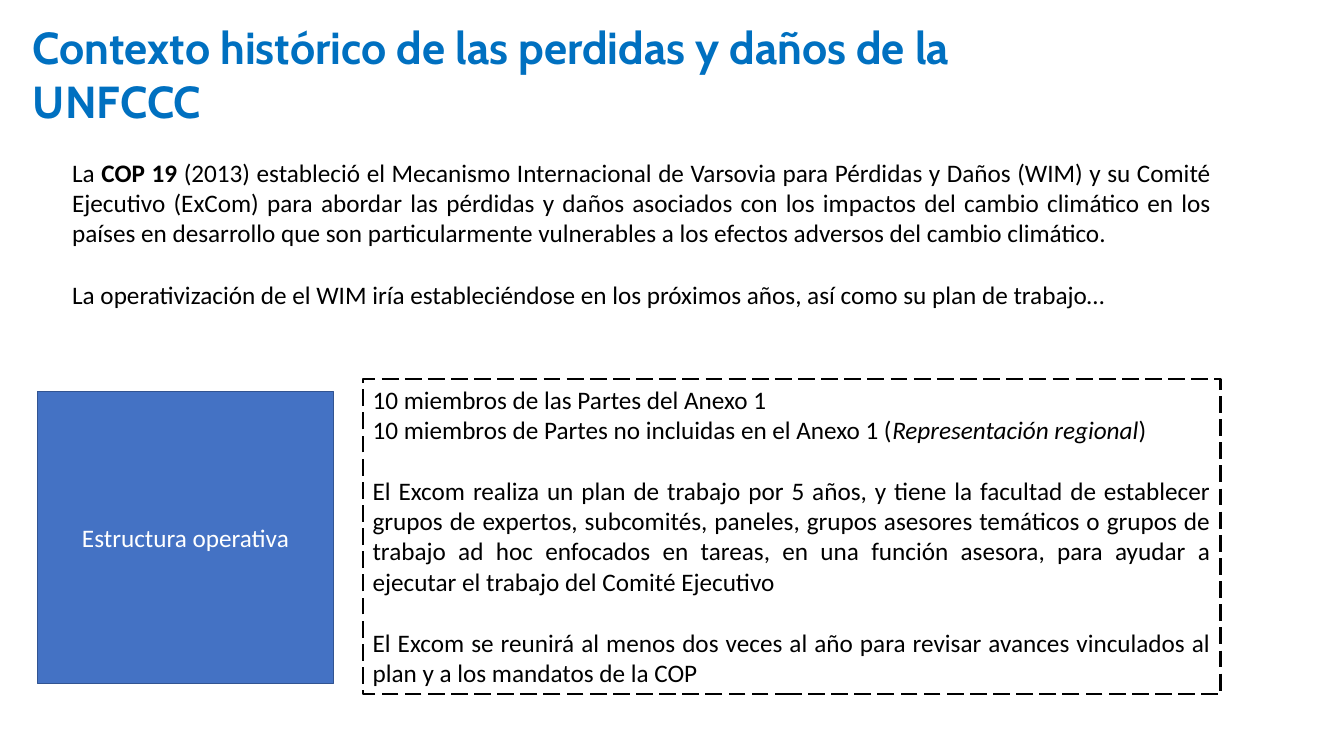
from pptx import Presentation
from pptx.dml.color import RGBColor
from pptx.enum.dml import MSO_LINE
from pptx.enum.shapes import MSO_SHAPE
from pptx.enum.text import MSO_ANCHOR, MSO_AUTO_SIZE, PP_ALIGN
from pptx.util import Cm, Pt

# Each paragraph is (gap before it?, [(text, style), ...])
TITLE = [(False, [("Contexto histórico de las perdidas y daños de la UNFCCC", "bold")])]
INTRO = [
    (False, [
        ("La ", ""),
        ("COP 19 ", "bold"),
        ("(2013) estableció el Mecanismo Internacional de Varsovia para Pérdidas y Daños (WIM) "
         "y su Comité Ejecutivo (ExCom) para abordar las pérdidas y daños asociados con los "
         "impactos del cambio climático en los países en desarrollo que son particularmente "
         "vulnerables a los efectos adversos del cambio climático.", ""),
    ]),
    (True, [("La operativización de el WIM iría estableciéndose en los próximos años, "
             "así como su plan de trabajo…", "")]),
]
DETAILS = [
    (False, [("10 miembros de las Partes del Anexo 1", "")]),
    (False, [
        ("10 miembros de Partes no incluidas en el Anexo 1 (", ""),
        ("Representación regional", "italic"),
        (")", ""),
    ]),
    (True, [("El Excom realiza un plan de trabajo por 5 años, y tiene la facultad de establecer "
             "grupos de expertos, subcomités, paneles, grupos asesores temáticos o grupos de "
             "trabajo ad hoc enfocados en tareas, en una función asesora, para ayudar a "
             "ejecutar el trabajo del Comité Ejecutivo", "")]),
    (True, [("El Excom se reunirá al menos dos veces al año para revisar avances vinculados "
             "al plan y a los mandatos de la COP", "")]),
]
STRUCTURE = [(False, [("Estructura operativa", "")])]

# Left, top, width, height in centimetres
PLACES = {
    "title": (0.58, 0.38, 26.8, 1.63),
    "intro": (1.57, 3.84, 29.21, 4.11),
    "details": (9.14, 9.55, 21.62, 7.95),
    "structure": (0.94, 9.86, 7.47, 7.37),
}

THEME = {
    "title_font": "Cabin", "body_font": "Calibri",
    "title_size": 32, "body_size": 18, "gap": 22,
    "title": RGBColor(0x00, 0x70, 0xC0),
    "text": RGBColor(0x00, 0x00, 0x00),
    "light": RGBColor(0xFF, 0xFF, 0xFF),
    "fill": RGBColor(0x44, 0x72, 0xC4),
    "edge": RGBColor(0x32, 0x54, 0x91),
}


def place(name):
    return [Cm(v) for v in PLACES[name]]


def write(sp, paragraphs, font=THEME["body_font"], size=THEME["body_size"],
          color=THEME["text"], align=PP_ALIGN.JUSTIFY, anchor=MSO_ANCHOR.TOP, grow=True):
    tf = sp.text_frame
    tf.word_wrap = True
    tf.vertical_anchor = anchor
    tf.auto_size = MSO_AUTO_SIZE.SHAPE_TO_FIT_TEXT if grow else MSO_AUTO_SIZE.NONE
    for i, (gap, runs) in enumerate(paragraphs):
        p = tf.add_paragraph() if i else tf.paragraphs[0]
        p.alignment = align
        p.space_before = Pt(THEME["gap"] if gap else 0)
        for text, style in runs:
            r = p.add_run()
            r.text = text
            r.font.name = font
            r.font.size = Pt(size)
            r.font.color.rgb = color
            r.font.bold = style == "bold"
            r.font.italic = style == "italic"


def add_box(s, name, line, width, fill=None, dash=None):
    sp = s.shapes.add_shape(MSO_SHAPE.RECTANGLE, *place(name))
    sp.shadow.inherit = False
    if fill is None:
        sp.fill.background()
    else:
        sp.fill.solid()
        sp.fill.fore_color.rgb = fill
    sp.line.color.rgb = line
    sp.line.width = Pt(width)
    if dash is not None:
        sp.line.dash_style = dash
    return sp


def main():
    prs = Presentation()
    prs.slide_width, prs.slide_height = Cm(33.87), Cm(19.05)
    s = prs.slides.add_slide(prs.slide_layouts[6])

    write(s.shapes.add_textbox(*place("title")), TITLE, font=THEME["title_font"],
          size=THEME["title_size"], color=THEME["title"], align=PP_ALIGN.LEFT)
    write(s.shapes.add_textbox(*place("intro")), INTRO)
    write(add_box(s, "details", THEME["text"], 1.5, dash=MSO_LINE.LONG_DASH), DETAILS)
    write(add_box(s, "structure", THEME["edge"], 1, fill=THEME["fill"]), STRUCTURE,
          color=THEME["light"], align=PP_ALIGN.CENTER, anchor=MSO_ANCHOR.MIDDLE, grow=False)

    prs.save("out.pptx")


if __name__ == "__main__":
    main()
